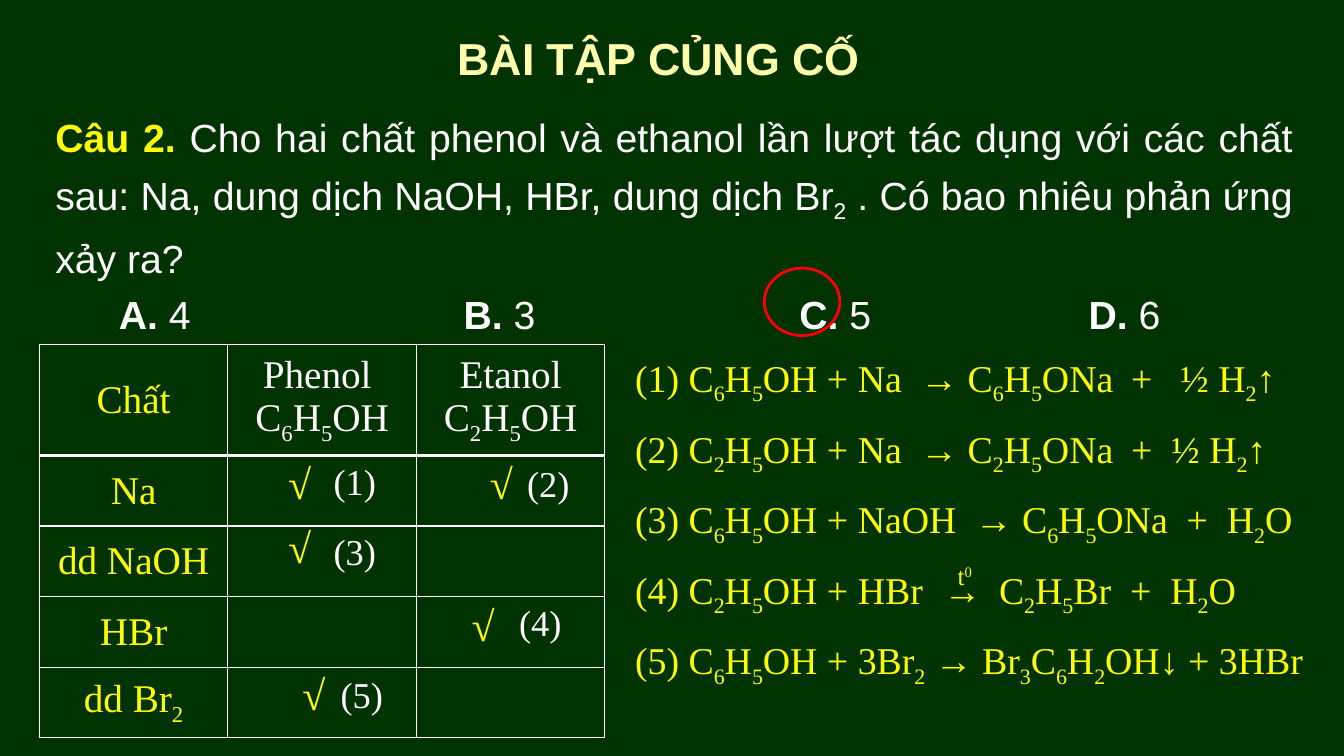
from dataclasses import dataclass
from typing import NamedTuple

from lxml.etree import SubElement
from pptx import Presentation
from pptx.dml.color import RGBColor
from pptx.enum.shapes import MSO_SHAPE as Shape
from pptx.enum.text import MSO_ANCHOR as Anchor, MSO_AUTO_SIZE as AutoSize, PP_ALIGN as Align
from pptx.oxml.ns import qn
from pptx.util import Emu, Pt

SCALE = 9144  # EMU per px, 100 px to the inch
GREEN, CREAM, YELLOW, WHITE, RED = "003300", "FFFFAC", "FFFF00", "FFFFFF", "FF0000"
SANS, SERIF = "Arial", "Times New Roman"


class Style(NamedTuple):
    size: int
    color: str
    name: str = SERIF
    bold: bool = False


class Span(NamedTuple):
    text: str
    style: Style
    baseline: int = 0


@dataclass
class Mark:
    number: int
    check: tuple[int, int]
    label: tuple[int, int]


@dataclass
class Equation:
    text: str
    stops: tuple[int, ...] = ()


TITLE = Style(32, CREAM, SANS, True)
LEAD = Style(28, YELLOW, SANS, True)
BODY = Style(28, WHITE, SANS)
LETTER = BODY._replace(bold=True)
CELL_KEY, CELL_HEAD = Style(28, YELLOW), Style(28, WHITE)
CHECK, LABEL = Style(30, YELLOW, bold=True), Style(26, WHITE)
FORMULA, CONDITION = Style(27, YELLOW), Style(18, YELLOW)

ANSWERS = {"A.": "4", "B.": "3", "C.": "5", "D.": "6"}
ANSWER_STOPS = (63, 405, 738, 1025)
COLUMN_WIDTH = 187
ROW_HEIGHTS = (103, 70, 70, 70, 70)
HEADINGS = (("Phenol ", "C_6H_5OH"), ("Etanol", "C_2H_5OH"))
SUBSTANCES = ("Chất", "Na", "dd NaOH", "HBr", "dd Br_2")
MARKS = (
    Mark(1, (276, 449), (321, 451)),
    Mark(2, (476, 449), (513, 453)),
    Mark(3, (276, 512), (321, 520)),
    Mark(4, (458, 590), (505, 590)),
    Mark(5, (290, 658), (328, 662)),
)
EQUATIONS = (
    Equation("C_6H_5OH + Na\t→ C_6H_5ONa\t+\t½ H_2↑", (283, 492, 541)),
    Equation("C_2H_5OH + Na\t→ C_2H_5ONa\t+\t½ H_2↑", (283, 492, 532)),
    Equation("C_6H_5OH + NaOH\t→ C_6H_5ONa\t+\tH_2O", (337, 547, 587)),
    Equation("C_2H_5OH + HBr\t→\tC_2H_5Br\t+\tH_2O", (306, 361, 491, 531)),
    Equation("C_6H_5OH + 3Br_2 → Br_3C_6H_2OH↓ + 3HBr"),
)


def px(length: int) -> Emu:
    return Emu(length * SCALE)


def rgb(color: str) -> RGBColor:
    return RGBColor.from_string(color)


def formula(text: str, style: Style) -> list[Span]:
    """Turn the character after each underscore into a subscript."""
    first, *rest = text.split("_")
    spans = [Span(first, style)]
    for part in rest:
        spans += [Span(part[0], style, -25), Span(part[1:], style)]
    return [span for span in spans if span.text]


def write(para, spans: list[Span], stops: tuple[int, ...] = (), **layout) -> None:
    for key, value in layout.items():
        setattr(para, key, value)
    if stops:
        tabs = SubElement(para._p.get_or_add_pPr(), qn("a:tabLst"))
        for stop in stops:
            SubElement(tabs, qn("a:tab"), pos=str(px(stop)), algn="l")
    for item in spans:
        span = para.add_run()
        span.text = item.text
        look = item.style._asdict() | {"size": Pt(item.style.size)}
        span.font.color.rgb = rgb(look.pop("color"))
        for key, value in look.items():
            setattr(span.font, key, value)
        if item.baseline:
            span._r.get_or_add_rPr().set("baseline", str(item.baseline * 1000))


def place(box, left: int, top: int, width: int, height: int) -> None:
    bounds = {"left": left, "top": top, "width": width, "height": height}
    for key, value in bounds.items():
        setattr(box, key, px(value))


def add_text(page, left: int, top: int, width: int, height: int):
    box = page.shapes.add_textbox(*map(px, (left, top, width, height)))
    box.text_frame.word_wrap = True
    return box.text_frame


def set_borders(cell, row: int) -> None:
    widths = {"L": 1, "R": 1, "T": 3 if row == 1 else 1, "B": 3 if row == 0 else 1}
    properties = cell._tc.get_or_add_tcPr()
    for index, (side, width) in enumerate(widths.items()):
        line = SubElement(properties, qn(f"a:ln{side}"), w=str(Pt(width)))
        fill = SubElement(line, qn("a:solidFill"))
        SubElement(fill, qn("a:srgbClr"), val=WHITE)
        properties.insert(index, line)


def add_title(page) -> None:
    title = page.shapes.title
    place(title, 442, 25, 423, 64)
    settings = {"word_wrap": True, "auto_size": AutoSize.NONE, "vertical_anchor": Anchor.TOP}
    for key, value in settings.items():
        setattr(title.text_frame, key, value)
    write(title.text_frame.paragraphs[0], [Span("BÀI TẬP CỦNG CỐ", TITLE)],
          alignment=Align.CENTER, line_spacing=1.0)


def add_question(page) -> None:
    frame = add_text(page, 45, 98, 1247, 231)
    question = ("Cho hai chất phenol và ethanol lần lượt tác dụng với các chất sau: Na, "
                "dung dịch NaOH, HBr, dung dịch Br_2 . Có bao nhiêu phản ứng xảy ra?")
    write(frame.paragraphs[0], [Span("Câu 2. ", LEAD), *formula(question, BODY)],
          alignment=Align.JUSTIFY, line_spacing=1.2)
    answers = []
    for letter, value in ANSWERS.items():
        answers += [Span(f"\t{letter}", LETTER), Span(f" {value}", BODY)]
    write(frame.add_paragraph(), answers, ANSWER_STOPS,
          alignment=Align.LEFT, line_spacing=1.2)


def add_reaction_table(page) -> None:
    columns = len(HEADINGS) + 1
    table = page.shapes.add_table(len(ROW_HEIGHTS), columns, px(39), px(342),
                                  px(COLUMN_WIDTH * columns), px(sum(ROW_HEIGHTS))).table
    table.first_row = table.horz_banding = False
    for column in table.columns:
        column.width = px(COLUMN_WIDTH)
    for row, height in enumerate(ROW_HEIGHTS):
        table.rows[row].height = px(height)
        for column in range(columns):
            cell = table.cell(row, column)
            cell.fill.background()
            cell.vertical_anchor = Anchor.MIDDLE
            set_borders(cell, row)
            lines, style = (), CELL_HEAD
            if column == 0:
                lines, style = (SUBSTANCES[row],), CELL_KEY
            elif row == 0:
                lines = HEADINGS[column - 1]
            for index, text in enumerate(lines):
                frame = cell.text_frame
                para = frame.add_paragraph() if index else frame.paragraphs[0]
                write(para, formula(text, style), alignment=Align.CENTER)


def main() -> None:
    deck = Presentation()
    deck.slide_width, deck.slide_height = px(1333), px(750)
    page = deck.slides.add_slide(deck.slide_layouts[5])
    page.background.fill.solid()
    page.background.fill.fore_color.rgb = rgb(GREEN)

    add_title(page)
    add_question(page)

    # Ring around the right answer
    ring = page.shapes.add_shape(Shape.OVAL, *map(px, (758, 266, 75, 67)))
    ring.shadow.inherit = False
    ring.fill.background()
    ring.line.color.rgb = rgb(RED)
    ring.line.width = Pt(2)

    add_reaction_table(page)

    # Check marks with reaction numbers
    for mark in MARKS:
        check = add_text(page, *mark.check, 63, 61)
        write(check.paragraphs[0], [Span("√", CHECK)])
        label = add_text(page, *mark.label, 73, 54)
        write(label.paragraphs[0], [Span(f"({mark.number})", LABEL)])

    # Equations and the heating condition
    for index, equation in enumerate(EQUATIONS):
        frame = add_text(page, 620, 347 + 70 * index, 702, 56)
        write(frame.paragraphs[0], formula(f"({index + 1}) {equation.text}", FORMULA),
              equation.stops)
    condition = add_text(page, 940, 551, 55, 40)
    write(condition.paragraphs[0], [Span("t", CONDITION), Span("0", CONDITION, 30)])

    deck.save("out.pptx")


if __name__ == "__main__":
    main()
